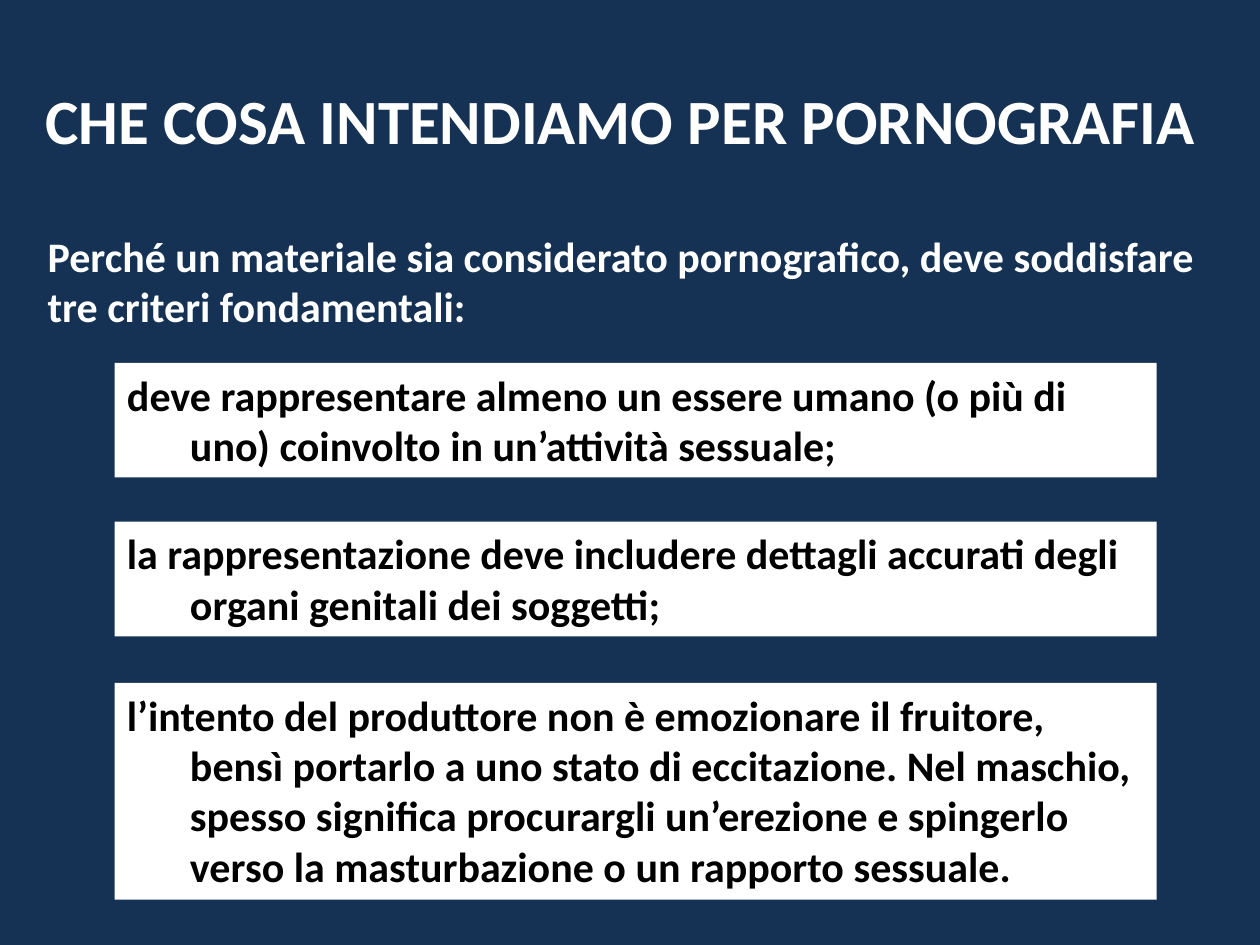
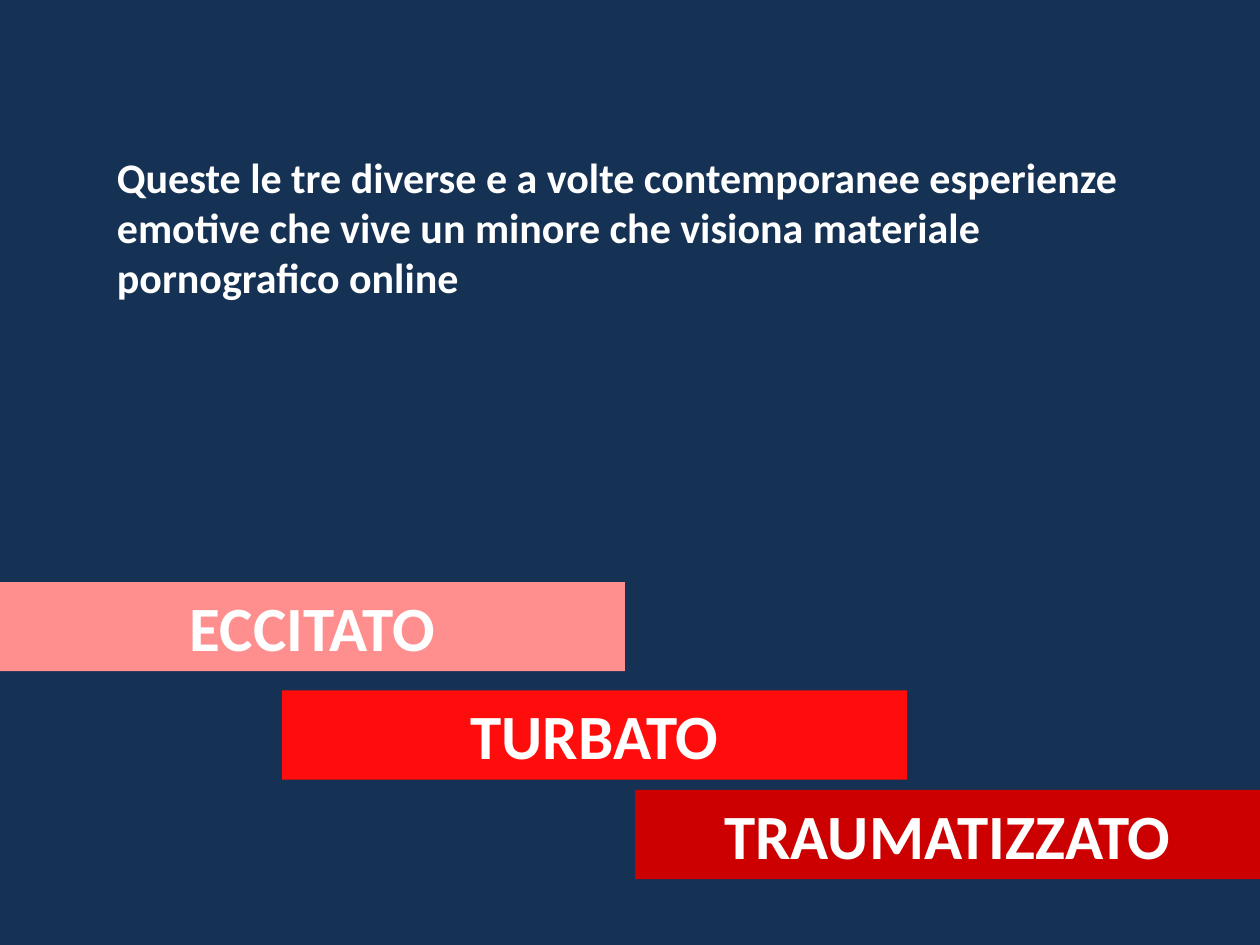
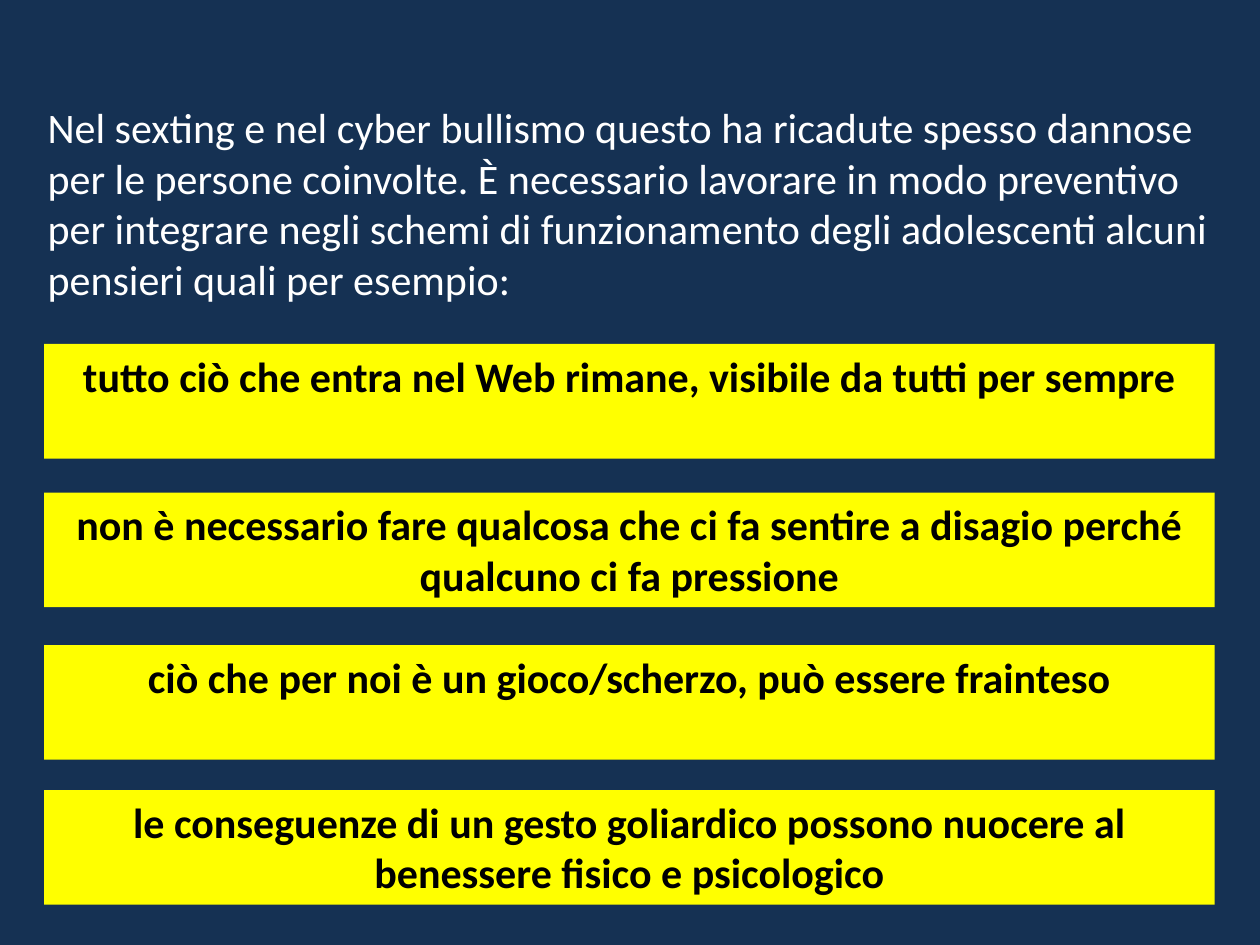
from pptx import Presentation, util as u
from pptx.dml.color import RGBColor
from pptx.enum import shapes, text

HUES = {"navy": "153153", "white": "FFFFFF", "black": "000000", "yellow": "FFFF00",
        "pink": "FF8F8F", "red": "FF0D0D", "dark": "CC0000"}
FONT = "Calibri"
BODY, HEAD = 24, 36
WIDE, HIGH = u.Inches(10), u.Inches(7.5)
LEFT = text.PP_ALIGN.LEFT
MID = text.PP_ALIGN.CENTER


def hue(name):
    return RGBColor.from_string(HUES[name])


def tall(lines, size=BODY):
    """Height of a box with this many lines, in percent of the slide."""
    return 1.33 + 0.225 * size * lines


def place(box):
    """Turn left, top, width, height from percent of the slide into lengths."""
    return [int(part * side / 100) for part, side in zip(box, (WIDE, HIGH) * 2)]


def write(shape, words, color, size=BODY, bold=True, align=LEFT):
    frame = shape.text_frame
    frame.word_wrap = True
    frame.vertical_anchor = text.MSO_ANCHOR.TOP
    frame.text = words
    para = frame.paragraphs[0]
    para.alignment = align
    font = para.runs[0].font
    font.name, font.size, font.bold = FONT, u.Pt(size), bold
    font.color.rgb = hue(color)
    return para


def label(slide, box, words, size=BODY, bold=True):
    shape = slide.shapes.add_textbox(*place(box))
    write(shape, words, "white", size, bold)
    return shape


def panel(slide, box, words, fill, color, size=BODY, align=MID):
    shape = slide.shapes.add_shape(shapes.MSO_SHAPE.RECTANGLE, *place(box))
    shape.shadow.inherit = False
    shape.fill.solid()
    shape.fill.fore_color.rgb = hue(fill)
    shape.line.fill.background()
    return write(shape, words, color, size, align=align)


def hang(para):
    """Indent every line but the first by half an inch."""
    props = para._p.get_or_add_pPr()
    props.set("marL", str(u.Inches(0.5)))
    props.set("indent", str(-u.Inches(0.5)))


def criteria(slide, box, items):
    """Stack white panels at offsets from the top of the box."""
    left, top, width = box
    for drop, lines, words in items:
        hang(panel(slide, (left, top + drop, width, tall(lines)),
                   words, "white", "black", align=LEFT))


def steps(slide, box, items):
    """Lay coloured bands like stairs across the box."""
    left, top, width = box
    for shift, drop, fill, words in items:
        panel(slide, (left + shift, top + drop, width, tall(1, HEAD)),
              words, fill, "white", HEAD)


def thoughts(slide, box, items):
    """Stack yellow panels at offsets from the top of the box."""
    left, top, width = box
    for drop, words in items:
        panel(slide, (left, top + drop, width, tall(2)), words, "yellow", "black")


def page(deck):
    slide = deck.slides.add_slide(deck.slide_layouts[6])
    slide.background.fill.solid()
    slide.background.fill.fore_color.rgb = hue("navy")
    return slide


def meaning(deck):
    slide = page(deck)
    label(slide, (2.8, 23.73, 94.5, tall(2)),
          "Perché un materiale sia considerato pornografico, deve soddisfare "
          "tre criteri fondamentali:")
    title = label(slide, (2.6, 8, 95.4, tall(1, HEAD)),
                  "CHE COSA INTENDIAMO PER PORNOGRAFIA", HEAD)
    title.text_frame.word_wrap = False
    criteria(slide, (9.1, 38.4, 82.7), [
        (0, 2, "deve rappresentare almeno un essere umano (o più di uno) "
               "coinvolto in un’attività sessuale;"),
        (16.8, 2, "la rappresentazione deve includere dettagli accurati degli "
                  "organi genitali dei soggetti;"),
        (33.87, 4, "l’intento del produttore non è emozionare il fruitore, bensì "
                   "portarlo a uno stato di eccitazione. Nel maschio, spesso "
                   "significa procurargli un’erezione e spingerlo verso la "
                   "masturbazione o un rapporto sessuale."),
    ])


def feelings(deck):
    slide = page(deck)
    label(slide, (8.3, 15.33, 82.7, tall(3)),
          "Queste le tre diverse e a volte contemporanee esperienze emotive che "
          "vive un minore che visiona materiale pornografico online")
    steps(slide, (0, 61.6, 49.6), [
        (0, 0, "pink", "ECCITATO"),
        (22.4, 11.47, "red", "TURBATO"),
        (50.4, 22, "dark", "TRAUMATIZZATO"),
    ])


def advice(deck):
    slide = page(deck)
    label(slide, (2.8, 10.13, 95.3, tall(4)),
          "Nel sexting e nel cyber bullismo questo ha ricadute spesso dannose per "
          "le persone coinvolte. È necessario lavorare in modo preventivo per "
          "integrare negli schemi di funzionamento degli adolescenti alcuni "
          "pensieri quali per esempio:", bold=False)
    thoughts(slide, (3.5, 36.4, 92.9), [
        (0, "tutto ciò che entra nel Web rimane, visibile da tutti per sempre"),
        (15.73, "non è necessario fare qualcosa che ci fa sentire a disagio "
                "perché qualcuno ci fa pressione"),
        (31.87, "ciò che per noi è un gioco/scherzo, può essere frainteso"),
        (47.2, "le conseguenze di un gesto goliardico possono nuocere al "
               "benessere fisico e psicologico"),
    ])


def main():
    deck = Presentation()
    deck.slide_width, deck.slide_height = WIDE, HIGH
    for build in (meaning, feelings, advice):
        build(deck)
    deck.save("out.pptx")


if __name__ == "__main__":
    main()
